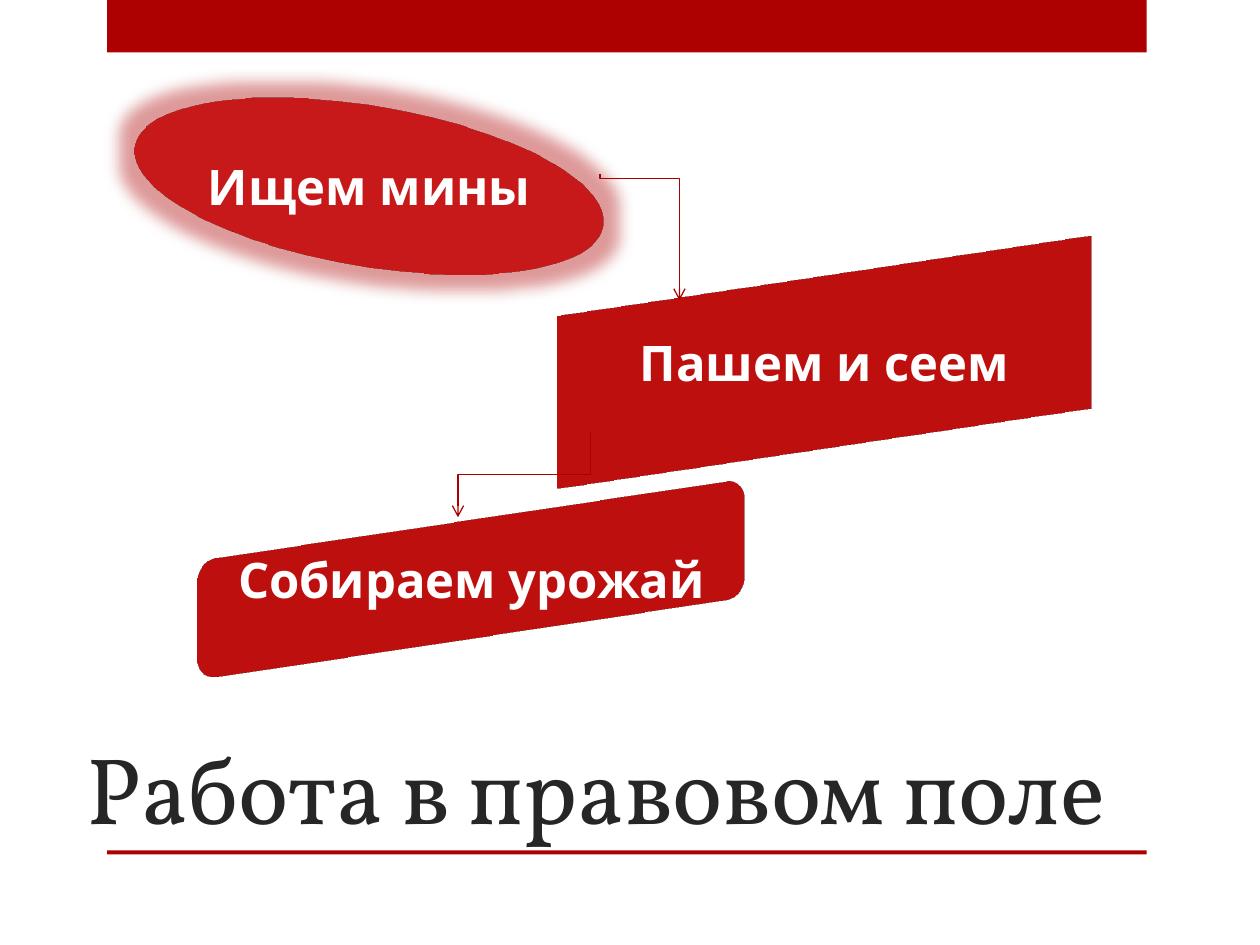
"""Build the slide "Работа в правовом поле" with three tilted steps."""
from lxml import etree
from pptx import Presentation
from pptx import util as u
from pptx.dml.color import RGBColor
from pptx.enum import shapes, text
from pptx.oxml import parse_xml
from pptx.oxml.ns import qn

RED = RGBColor(0xAD, 0x01, 0x01)
DARK_RED = RGBColor(0x80, 0x01, 0x01)
ARROW_RED = RGBColor(0xAA, 0x00, 0x00)
INK = RGBColor(0x26, 0x26, 0x26)
WHITE = RGBColor(0xFF, 0xFF, 0xFF)

DRAWING = 'xmlns:a="http://schemas.openxmlformats.org/drawingml/2006/main"'
GLOW_RADIUS = u.Pt(18)
GLOW = (f'<a:effectLst {DRAWING}><a:glow rad="{GLOW_RADIUS}"><a:srgbClr val="{RED}">'
        '<a:alpha val="40000"/></a:srgbClr></a:glow></a:effectLst>')
FALLING = "isometricOffAxis2Left"
RISING = "isometricOffAxis1Right"
ANGLE_UNITS = 60000
ADJUST_UNITS = 100000


def style_text(frame, words, anchor, align, font, size, color):
    frame.word_wrap = True
    frame.auto_size = text.MSO_AUTO_SIZE.NONE
    frame.vertical_anchor = anchor
    para = frame.paragraphs[0]
    para.text = words
    para.alignment = align
    para.font.name = font
    para.font.size = u.Pt(size)
    para.font.color.rgb = color
    return para


def add_red_shape(page, kind, place):
    shape = page.shapes.add_shape(kind, *map(u.Pt, place))
    shape.shadow.inherit = False
    shape.fill.solid()
    shape.fill.fore_color.rgb = RED
    return shape


deck = Presentation()
deck.slide_width, deck.slide_height = u.Pt(720), u.Pt(540)
page = deck.slides.add_slide(deck.slide_layouts[5])

title = page.shapes.title
title.left, title.top = u.Pt(42.5), u.Pt(394.8)
title.width, title.height = u.Pt(635), u.Pt(90.75)
style_text(title.text_frame, "Работа в правовом поле", text.MSO_ANCHOR.BOTTOM,
           text.PP_ALIGN.LEFT, "Vollkorn", 54, INK)

for top, height in ((0, 30), (486, 2.2)):
    bar = add_red_shape(page, shapes.MSO_SHAPE.RECTANGLE, (61.2, top, 594, height))
    bar.line.fill.background()

STEPS = (
    ("Ищем мины", shapes.MSO_SHAPE.OVAL, (62, 57.3, 298, 98), FALLING, True),
    ("Пашем и сеем", shapes.MSO_SHAPE.RECTANGLE, (301.2, 155.2, 340, 103.7), RISING, False),
    ("Собираем урожай", shapes.MSO_SHAPE.ROUNDED_RECTANGLE, (95.5, 295, 347.8, 71.3),
     RISING, False),
)
for words, kind, place, camera, glows in STEPS:
    step = add_red_shape(page, kind, place)
    step.line.color.rgb = DARK_RED
    step.line.width = u.Pt(2.25)
    para = style_text(step.text_frame, words, text.MSO_ANCHOR.MIDDLE,
                      text.PP_ALIGN.CENTER, "League Spartan", 28, WHITE)
    para.font.bold = True
    properties = step.element.spPr
    if glows:
        properties.replace(properties.find(qn("a:effectLst")), parse_xml(GLOW))
    properties.append(parse_xml(
        f'<a:scene3d {DRAWING}><a:camera prst="{camera}"/>'
        '<a:lightRig rig="threePt" dir="t"/></a:scene3d>'))

ARROWS = (
    ((401.6, 113), (329.6, 158.4), 270, 0.035),
    ((275, 233.3), (324, 308.9), 90, 0.5),
)
for begin, end, degrees, bend in ARROWS:
    arrow = page.shapes.add_connector(shapes.MSO_CONNECTOR.ELBOW,
                                      *map(u.Pt, begin + end))
    arrow.line.color.rgb = ARROW_RED
    arrow.line.width = u.Pt(0.75)
    properties = arrow.element.spPr
    properties.find(qn("a:xfrm")).set("rot", str(degrees * ANGLE_UNITS))
    guides = properties.find(qn("a:prstGeom")).get_or_add_avLst()
    etree.SubElement(guides, qn("a:gd"), name="adj1",
                     fmla=f"val {round(bend * ADJUST_UNITS)}")
    etree.SubElement(properties.find(qn("a:ln")), qn("a:tailEnd"), type="arrow")
    etree.SubElement(properties, qn("a:effectLst"))

deck.save("out.pptx")
